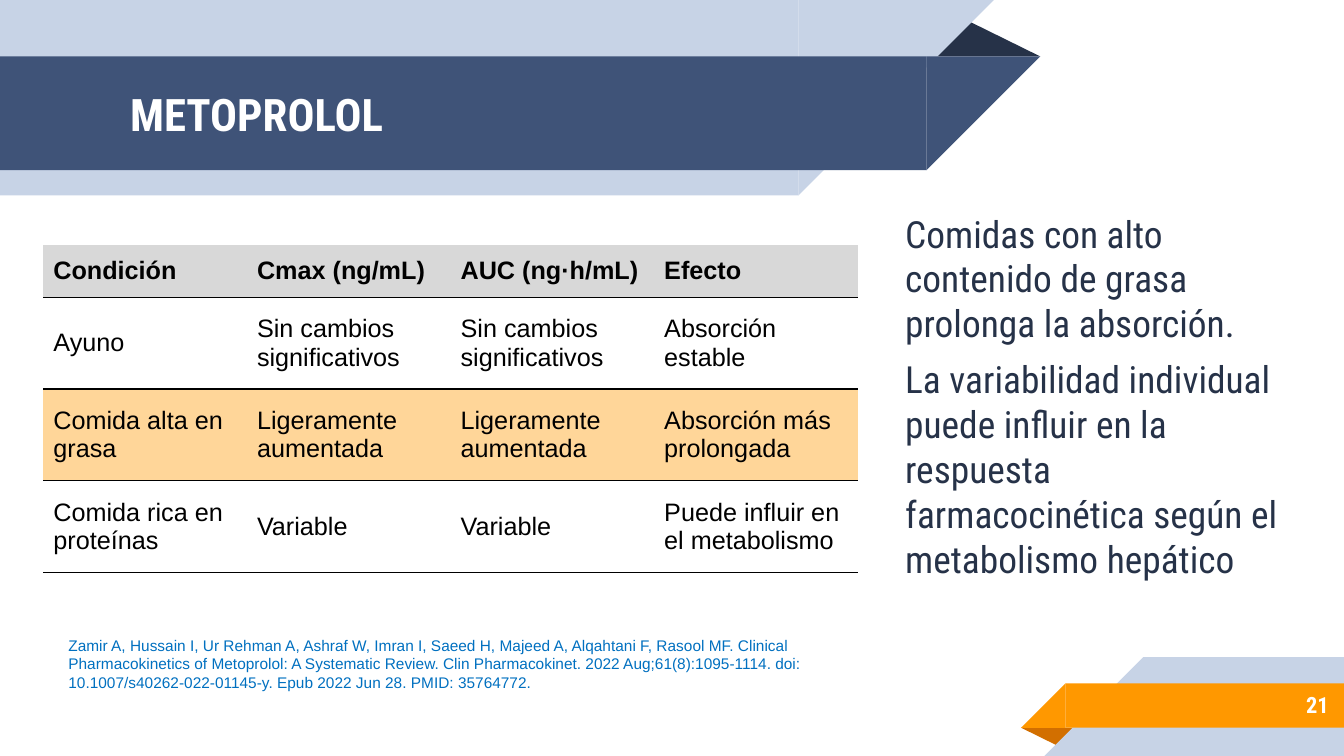
from dataclasses import dataclass

from lxml import etree
from pptx import Presentation
from pptx.dml.color import RGBColor
from pptx.enum.shapes import MSO_SHAPE
from pptx.enum.text import MSO_ANCHOR, MSO_AUTO_SIZE, PP_ALIGN
from pptx.oxml.ns import qn
from pptx.util import Inches, Pt

RECTANGLE = MSO_SHAPE.RECTANGLE
RIGHT_TRIANGLE = MSO_SHAPE.RIGHT_TRIANGLE
TRIANGLE = MSO_SHAPE.ISOSCELES_TRIANGLE
TOP, MIDDLE = MSO_ANCHOR.TOP, MSO_ANCHOR.MIDDLE
LEFT, RIGHT = PP_ALIGN.LEFT, PP_ALIGN.RIGHT
NO_AUTOFIT = MSO_AUTO_SIZE.NONE

# Slide grid
WIDTH, HEIGHT = Inches(13.33), Inches(7.5)
COLUMNS, ROWS = 40, 30
PLAIN_TABLE_STYLE = "{2D5ABB26-0587-4C30-8999-92F81FD0307C}"


@dataclass(frozen=True)
class Theme:
    heading_font: str = "Roboto Condensed"
    text_font: str = "Arial"
    navy: str = "263248"
    blue: str = "3F5378"
    pale_blue: str = "C7D3E6"
    orange: str = "FF9800"
    dark_orange: str = "D26F00"
    pale_orange: str = "FFD699"
    gray: str = "D8D8D8"
    black: str = "000000"
    white: str = "FFFFFF"
    citation: str = "0070C0"
    title_size: float = 32
    body_size: float = 26.7
    table_size: float = 18
    number_size: float = 16
    citation_size: float = 11


THEME = Theme()

TABLE_ROWS = [
    ["Condición", "Cmax (ng/mL)", "AUC (ng·h/mL)", "Efecto"],
    ["Ayuno", "Sin cambios significativos", "Sin cambios significativos", "Absorción estable"],
    ["Comida alta en grasa", "Ligeramente aumentada", "Ligeramente aumentada",
     "Absorción más prolongada"],
    ["Comida rica en proteínas", "Variable", "Variable", "Puede influir en el metabolismo"],
]
FINDINGS = [
    "Comidas con alto contenido de grasa prolonga la absorción.",
    "La variabilidad individual puede influir en la respuesta farmacocinética "
    "según el metabolismo hepático",
]
CITATION = (
    "Zamir A, Hussain I, Ur Rehman A, Ashraf W, Imran I, Saeed H, Majeed A, Alqahtani F, "
    "Rasool MF. Clinical Pharmacokinetics of Metoprolol: A Systematic Review. "
    "Clin Pharmacokinet. 2022 Aug;61(8):1095-1114. doi: 10.1007/s40262-022-01145-y. "
    "Epub 2022 Jun 28. PMID: 35764772."
)


def across(columns):
    return round(WIDTH * columns / COLUMNS)


def down(rows):
    return round(HEIGHT * rows / ROWS)


def grid_box(left, top, width, height):
    return across(left), down(top), across(width), down(height)


# Ribbons
def add_plain_shape(slide, kind, box, color, rotation=0):
    shape = slide.shapes.add_shape(kind, *box)
    shape.shadow.inherit = False
    shape.fill.solid()
    shape.fill.fore_color.rgb = RGBColor.from_string(color)
    shape.line.fill.background()
    shape.rotation = rotation
    return shape


def add_fold(slide, box, color, rotation=0):
    fold = add_plain_shape(slide, TRIANGLE, box, color, rotation)
    fold.adjustments[0] = 0.324


def add_ribbon(slide, edge, top, height, color, from_left):
    """A band from one slide side to the edge column, ending in a 45° tip."""
    edge, top, side = across(edge), down(top), down(height)
    if from_left:
        start, length, tip, turn = 0, edge, edge, 90
    else:
        start, length, tip, turn = edge, WIDTH - edge, edge - side, 270
    add_plain_shape(slide, RECTANGLE, (start, top, length, side), color)
    add_plain_shape(slide, RIGHT_TRIANGLE, (tip, top, side, side), color, turn)


# Text
def style_paragraph(paragraph, font_name, size, color, bold=False, align=LEFT):
    paragraph.alignment = align
    font = paragraph.font
    font.name, font.size, font.bold = font_name, Pt(size), bold
    font.color.rgb = RGBColor.from_string(color)


def set_frame(frame, anchor, margin_x=0.1, margin_y=0.1):
    frame.word_wrap = True
    frame.auto_size = NO_AUTOFIT
    frame.vertical_anchor = anchor
    frame.margin_left = frame.margin_right = Inches(margin_x)
    frame.margin_top = frame.margin_bottom = Inches(margin_y)


def place(shape, box):
    shape.left, shape.top, shape.width, shape.height = box


def add_text(slide, box, text, anchor, margin_y, *style, **options):
    frame = slide.shapes.add_textbox(*box).text_frame
    set_frame(frame, anchor, margin_y=margin_y)
    frame.text = text
    style_paragraph(frame.paragraphs[0], *style, **options)


def fill_title(title, box, text):
    place(title, box)
    set_frame(title.text_frame, MIDDLE)
    title.text_frame.text = text
    style_paragraph(title.text_frame.paragraphs[0], THEME.heading_font,
                    THEME.title_size, THEME.white, bold=True)


def fill_body(body, box, texts):
    place(body, box)
    frame = body.text_frame
    set_frame(frame, TOP)
    frame.text = "\n".join(texts)
    for paragraph in frame.paragraphs:
        paragraph.space_before = Pt(8)
        properties = paragraph._p.get_or_add_pPr()
        properties.set("marL", str(Inches(0.15)))
        properties.set("indent", "0")
        etree.SubElement(properties, qn("a:buNone"))
        style_paragraph(paragraph, THEME.heading_font, THEME.body_size, THEME.navy)


# Table
def add_bottom_border(cell, color):
    line = etree.Element(qn("a:lnB"), w=str(Pt(1)))
    fill = etree.SubElement(line, qn("a:solidFill"))
    etree.SubElement(fill, qn("a:srgbClr"), val=color)
    cell._tc.get_or_add_tcPr().insert(0, line)


def add_condition_table(slide, box, rows, row_heights, row_fills):
    table = slide.shapes.add_table(len(rows), len(rows[0]), *box).table
    table._tbl.tblPr.find(qn("a:tableStyleId")).text = PLAIN_TABLE_STYLE
    table.horz_banding = False
    for r, texts in enumerate(rows):
        table.rows[r].height = down(row_heights[r])
        for c, text in enumerate(texts):
            cell = table.cell(r, c)
            cell.text = text
            cell.vertical_anchor = MIDDLE
            style_paragraph(cell.text_frame.paragraphs[0], THEME.text_font,
                            THEME.table_size, THEME.black, bold=r == 0)
            if row_fills[r]:
                cell.fill.solid()
                cell.fill.fore_color.rgb = RGBColor.from_string(row_fills[r])
            else:
                cell.fill.background()
            add_bottom_border(cell, THEME.black)


def main():
    presentation = Presentation()
    presentation.slide_width, presentation.slide_height = WIDTH, HEIGHT
    slide = presentation.slides.add_slide(presentation.slide_layouts[1])
    title, body = slide.placeholders

    # Header and footer ribbons
    add_fold(slide, grid_box(27.54, 0.72, 3.42, 1.52), THEME.navy)
    add_ribbon(slide, 23.76, 0, 7.76, THEME.pale_blue, from_left=True)
    add_ribbon(slide, 27.57, 2.24, 4.52, THEME.blue, from_left=True)
    add_fold(slide, grid_box(30.39, 28.88, 1.71, 0.76), THEME.dark_orange, 180)
    add_ribbon(slide, 34.02, 26.08, 3.92, THEME.pale_blue, from_left=False)
    add_ribbon(slide, 31.71, 27.12, 1.76, THEME.orange, from_left=False)

    # Placeholders go in front of the ribbons
    for placeholder in (title, body):
        slide.shapes._spTree.append(placeholder._element)
    fill_title(title, grid_box(3.57, 2.28, 23.01, 4.48), "METOPROLOL")
    fill_body(body, grid_box(26.19, 7.96, 12.51, 16.92), FINDINGS)

    # Slide number, table and citation
    add_text(slide, grid_box(33.33, 27.04, 6.51, 1.84), "21", MIDDLE, 0.1,
             THEME.heading_font, THEME.number_size, THEME.white, bold=True, align=RIGHT)
    add_condition_table(slide, grid_box(1.29, 9.72, 24.24, 13), TABLE_ROWS,
                        [2.08, 3.64, 3.64, 3.64],
                        [THEME.gray, None, THEME.pale_orange, None])
    add_text(slide, grid_box(1.74, 25.04, 22.56, 2.64), CITATION, TOP, 0.05,
             THEME.text_font, THEME.citation_size, THEME.citation)

    presentation.save("out.pptx")


if __name__ == "__main__":
    main()
